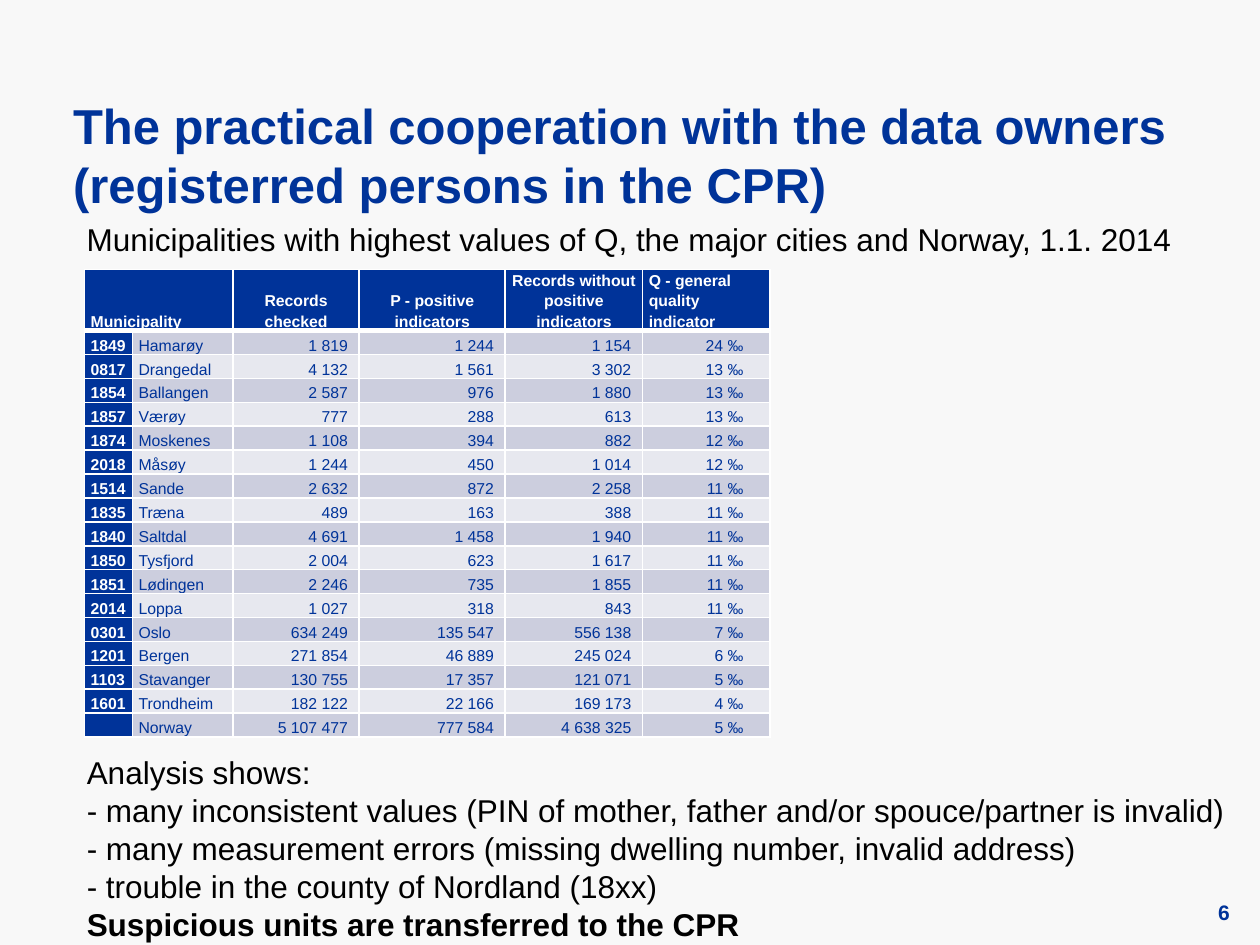
from dataclasses import dataclass
from typing import Any, NamedTuple, Optional

from lxml import etree
from pptx import Presentation
from pptx import util as u
from pptx.dml import color
from pptx.enum import text
from pptx.oxml import ns


@dataclass(frozen=True)
class Theme:
    face: str = "Arial"
    page: str = "F8F8F8"
    navy: str = "003399"
    white: str = "FFFFFF"
    black: str = "000000"
    bands: tuple = ("CCCEDE", "E7E8EF")
    title: float = 28
    body: float = 18
    foot: float = 12
    cell: float = 9
    thin: float = 1
    thick: float = 3


class Box(NamedTuple):
    left: float
    top: float
    width: float
    height: float


class Style(NamedTuple):
    size: float
    ink: str
    bold: bool = False
    align: Optional[text.PP_ALIGN] = None
    space: Optional[float] = None


class Town(NamedTuple):
    code: str
    name: str
    total: str
    found: str
    clean: str
    rate: str


THEME = Theme()
LEFT, MID, RIGHT = text.PP_ALIGN.LEFT, text.PP_ALIGN.CENTER, text.PP_ALIGN.RIGHT
TOP, CORE, BASE = (
    text.MSO_ANCHOR.TOP, text.MSO_ANCHOR.MIDDLE, text.MSO_ANCHOR.BOTTOM
)
COLS = (0.38, 0.8, 1, 1.16, 1.09, 1.01)
HEAD, ROW = 0.47, 0.19
PAD = 0.05
GAPS = (PAD, PAD, 0.09, 0.09, 0.09, 0.21)
SIDES = (LEFT, LEFT, RIGHT, RIGHT, RIGHT, RIGHT)
HEADS = (
    ("Municipality", LEFT),
    ("", LEFT),
    ("Records checked", MID),
    ("P - positive indicators", MID),
    ("Records without\npositive indicators", MID),
    ("Q - general quality indicator", LEFT),
)
TOWNS = (
    Town("1849", "Hamarøy", "1 819", "1 244", "1 154", "24 ‰"),
    Town("0817", "Drangedal", "4 132", "1 561", "3 302", "13 ‰"),
    Town("1854", "Ballangen", "2 587", "976", "1 880", "13 ‰"),
    Town("1857", "Værøy", "777", "288", "613", "13 ‰"),
    Town("1874", "Moskenes", "1 108", "394", "882", "12 ‰"),
    Town("2018", "Måsøy", "1 244", "450", "1 014", "12 ‰"),
    Town("1514", "Sande", "2 632", "872", "2 258", "11 ‰"),
    Town("1835", "Træna", "489", "163", "388", "11 ‰"),
    Town("1840", "Saltdal", "4 691", "1 458", "1 940", "11 ‰"),
    Town("1850", "Tysfjord", "2 004", "623", "1 617", "11 ‰"),
    Town("1851", "Lødingen", "2 246", "735", "1 855", "11 ‰"),
    Town("2014", "Loppa", "1 027", "318", "843", "11 ‰"),
    Town("0301", "Oslo", "634 249", "135 547", "556 138", "7 ‰"),
    Town("1201", "Bergen", "271 854", "46 889", "245 024", "6 ‰"),
    Town("1103", "Stavanger", "130 755", "17 357", "121 071", "5 ‰"),
    Town("1601", "Trondheim", "182 122", "22 166", "169 173", "4 ‰"),
    Town("", "Norway", "5 107 477", "777 584", "4 638 325", "5 ‰"),
)
NOTES = (
    "Analysis shows:",
    "- many inconsistent values (PIN of mother, father and/or spouce/partner is invalid)",
    "- many measurement errors (missing dwelling number, invalid address)",
    "- trouble in the county of Nordland (18xx)",
)


def apply(item: Any, values: dict) -> None:
    for key, value in values.items():
        setattr(item, key, value)


def place(box: Box) -> tuple:
    return tuple(u.Inches(side) for side in box)


def paint(item: Any, tint: str) -> None:
    item.fill.solid()
    item.fill.fore_color.rgb = color.RGBColor.from_string(tint)


def write(para: Any, words: str, style: Style) -> None:
    para.text = words
    apply(para, {"alignment": style.align, "line_spacing": style.space})
    for run in para.runs:
        apply(run.font, {
            "name": THEME.face, "size": u.Pt(style.size), "bold": style.bold,
        })
        run.font.color.rgb = color.RGBColor.from_string(style.ink)
    if not words:
        etree.SubElement(
            para._p, ns.qn("a:endParaRPr"), sz=str(int(style.size * 100))
        )


def fill(frame: Any, lines: list, inset: tuple, anchor: Any) -> None:
    side, edge = map(u.Inches, inset)
    apply(frame, {
        "word_wrap": True, "auto_size": text.MSO_AUTO_SIZE.NONE,
        "vertical_anchor": anchor, "margin_left": side, "margin_right": side,
        "margin_top": edge, "margin_bottom": edge,
    })
    for spot, (words, style) in enumerate(lines):
        para = frame.add_paragraph() if spot else frame.paragraphs[0]
        write(para, words, style)


def label(slide: Any, box: Box, lines: list, inset: tuple = (0.1, 0.05),
          anchor: Any = TOP) -> None:
    fill(slide.shapes.add_textbox(*place(box)).text_frame, lines, inset, anchor)


def edge(cell: Any, row: int) -> None:
    props = cell._tc.get_or_add_tcPr()
    for spot, side in enumerate("LRTB"):
        heavy = (row, side) in ((0, "B"), (1, "T"))
        width = THEME.thick if heavy else THEME.thin
        line = etree.Element(ns.qn(f"a:ln{side}"), w=str(u.Pt(width)))
        solid = etree.SubElement(line, ns.qn("a:solidFill"))
        etree.SubElement(solid, ns.qn("a:srgbClr"), val=THEME.white)
        props.insert(spot, line)


def draw(cell: Any, row: int, words: str, style: Style, tint: str,
         gap: float) -> None:
    write(cell.text_frame.paragraphs[0], words, style)
    apply(cell, {
        "vertical_anchor": BASE, "margin_left": u.Inches(PAD),
        "margin_right": u.Inches(gap), "margin_top": 0, "margin_bottom": 0,
    })
    paint(cell, tint)
    edge(cell, row)


def chart(slide: Any) -> None:
    box = Box(0.67, 2.14, sum(COLS), HEAD + ROW * len(TOWNS))
    grid = slide.shapes.add_table(len(TOWNS) + 1, len(COLS), *place(box)).table
    for col, width in zip(grid.columns, COLS):
        col.width = u.Inches(width)
    for spot, row in enumerate(grid.rows):
        row.height = u.Inches(ROW if spot else HEAD)
    for col, (words, side) in enumerate(HEADS):
        style = Style(THEME.cell, THEME.white, True, side, 1.15)
        draw(grid.cell(0, col), 0, words, style, THEME.navy, PAD)
    grid.cell(0, 0).merge(grid.cell(0, 1))
    for row, town in enumerate(TOWNS, 1):
        for col, words in enumerate(town):
            key = col == 0
            ink = THEME.white if key else THEME.navy
            tint = THEME.navy if key else THEME.bands[(row - 1) % 2]
            style = Style(THEME.cell, ink, key, SIDES[col], 1.15)
            draw(grid.cell(row, col), row, words, style, tint, GAPS[col])


def main() -> None:
    deck = Presentation()
    apply(deck, {"slide_width": u.Inches(10), "slide_height": u.Inches(7.5)})
    slide = deck.slides.add_slide(deck.slide_layouts[5])
    paint(slide.background, THEME.page)
    head = slide.shapes.title
    spots = place(Box(0.58, 0.76, 9.17, 0.92))
    apply(head, dict(zip(("left", "top", "width", "height"), spots)))
    fill(head.text_frame, [(
        "The practical cooperation with the data owners (registerred persons in the CPR)",
        Style(THEME.title, THEME.navy, True, LEFT),
    )], (0, 0), TOP)
    chart(slide)
    label(slide, Box(9.25, 7.11, 0.51, 0.26),
          [("6", Style(THEME.foot, THEME.navy, True, RIGHT))], (0, 0), CORE)
    plain = Style(THEME.body, THEME.black)
    notes = [(words, plain) for words in NOTES]
    notes.append(("Suspicious units are transferred to the CPR",
                  plain._replace(bold=True)))
    label(slide, Box(0.59, 5.93, 9.41, 1.62), notes)
    label(slide, Box(0.59, 1.7, 9.16, 0.4), [(
        "Municipalities with highest values of Q, the major cities and Norway, 1.1. 2014",
        plain,
    )])
    deck.save("out.pptx")


if __name__ == "__main__":
    main()
